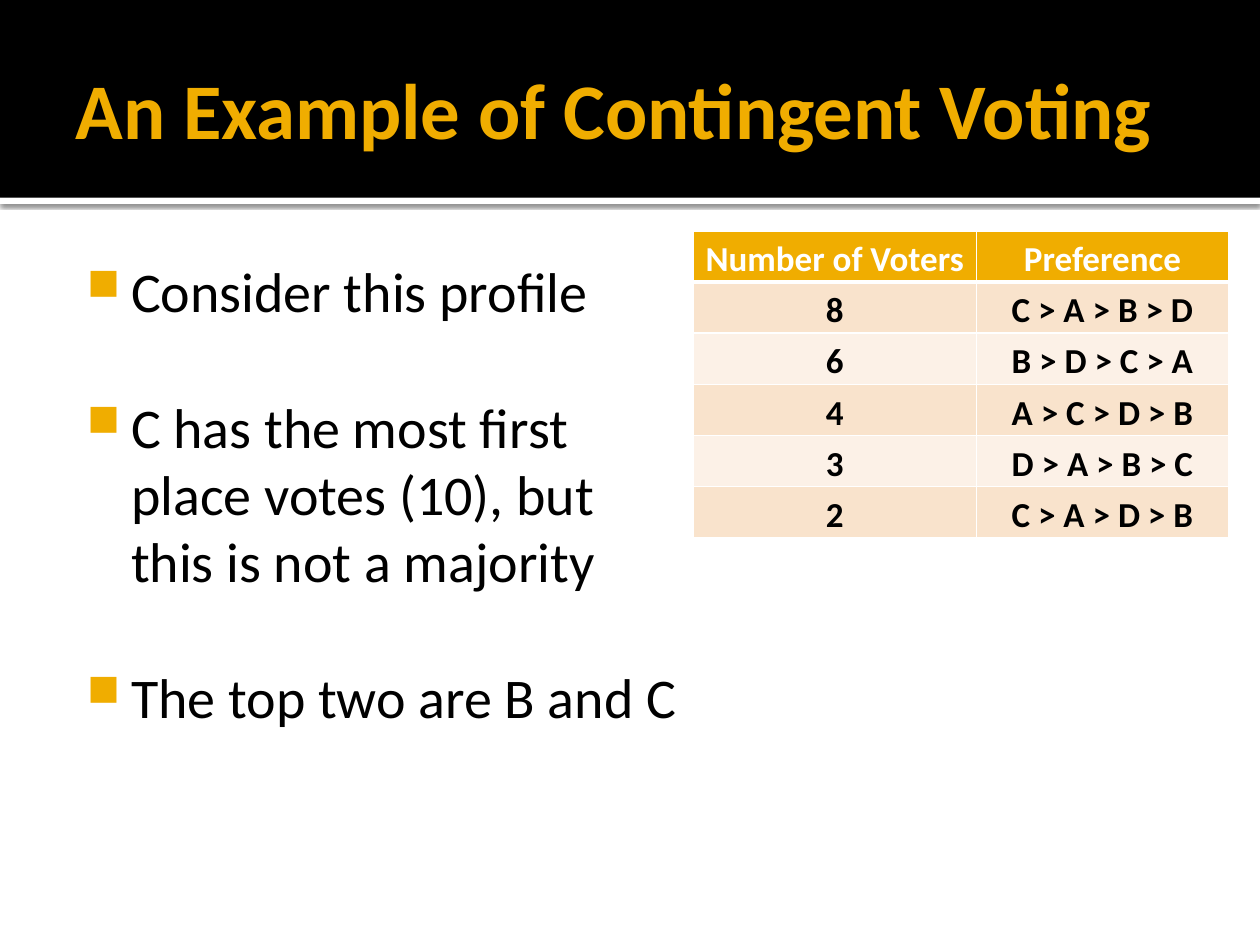
import dataclasses
import typing

import lxml.etree
import pptx
import pptx.dml.color
import pptx.enum.shapes
import pptx.enum.text
import pptx.oxml
import pptx.oxml.ns
import pptx.util

Pt = pptx.util.Pt
qn = pptx.oxml.ns.qn
ANCHOR = pptx.enum.text.MSO_ANCHOR
ALIGN = pptx.enum.text.PP_ALIGN
FONT = "Calibri"
COLORS = {
    "gold": "F0AD00",
    "black": "000000",
    "white": "FFFFFF",
    "odd_row": "F9E3CC",
    "even_row": "FCF1E7",
}


@dataclasses.dataclass(frozen=True)
class Band:
    top: float
    height: float
    color: str
    shadowed: bool


@dataclasses.dataclass(frozen=True)
class Bullet:
    lines: tuple[str, ...]
    space_before: float


class Profile(typing.NamedTuple):
    voters: str
    preference: str


BANDS = (
    Band(113, 3.6, "white", True),
    Band(0, 113, "black", False),
)
BULLETS = (
    Bullet(("Consider this profile",), 0),
    Bullet(("C has the most first", "place votes (10), but", "this is not a majority"), 39),
    Bullet(("The top two are B and C",), 39),
)
PROFILES = (
    Profile("Number of Voters", "Preference"),
    Profile("8", "C > A > B > D"),
    Profile("6", "B > D > C > A"),
    Profile("4", "A > C > D > B"),
    Profile("3", "D > A > B > C"),
    Profile("2", "C > A > D > B"),
)


def rgb(name: str) -> pptx.dml.color.RGBColor:
    return pptx.dml.color.RGBColor.from_string(COLORS[name])


def apply(target: typing.Any, values: dict[str, typing.Any]) -> None:
    for key, value in values.items():
        setattr(target, key, value)


def style_font(font: typing.Any, size: float, color: str, bold: bool) -> None:
    apply(font, {"name": FONT, "size": Pt(size), "bold": bold})
    font.color.rgb = rgb(color)


def margins(left: float, top: float, right: float, bottom: float) -> dict[str, int]:
    return {
        "margin_left": Pt(left),
        "margin_top": Pt(top),
        "margin_right": Pt(right),
        "margin_bottom": Pt(bottom),
    }


def add_fragment(parent: typing.Any, xml: str) -> None:
    namespace = pptx.oxml.ns.nsdecls("a")
    parent.append(pptx.oxml.parse_xml(xml.replace(" ", f" {namespace} ", 1)))


def draw_band(slide: typing.Any, band: Band) -> None:
    strip = slide.shapes.add_shape(
        pptx.enum.shapes.MSO_SHAPE.RECTANGLE, 0, Pt(band.top), Pt(720), Pt(band.height)
    )
    strip.fill.solid()
    strip.fill.fore_color.rgb = rgb(band.color)
    strip.line.fill.background()
    strip.shadow.inherit = False
    if band.shadowed:
        effects = strip.element.spPr.find(qn("a:effectLst"))
        add_fragment(
            effects,
            f'<a:outerShdw blurRad="{Pt(2.5)}" dist="{Pt(0.8)}" dir="5400000" rotWithShape="0">'
            f'<a:srgbClr val="{COLORS["black"]}"><a:alpha val="60000"/></a:srgbClr>'
            "</a:outerShdw>",
        )


def draw_title(slide: typing.Any, text: str) -> None:
    title = slide.shapes.title
    apply(title, {"left": Pt(36), "top": Pt(12), "width": Pt(648), "height": Pt(99)})
    title.element.getparent().append(title.element)
    frame = title.text_frame
    apply(frame, {
        "text": text,
        "word_wrap": True,
        "auto_size": pptx.enum.text.MSO_AUTO_SIZE.NONE,
        "vertical_anchor": ANCHOR.MIDDLE,
        **margins(7.2, 3.6, 3.6, 3.6),
    })
    heading = frame.paragraphs[0]
    heading.alignment = ALIGN.LEFT
    style_font(heading.runs[0].font, 45, "gold", True)


def draw_bullets(slide: typing.Any, bullets: tuple[Bullet, ...]) -> None:
    body = slide.shapes.add_textbox(Pt(36), Pt(139.5), Pt(648), Pt(364.5))
    frame = body.text_frame
    apply(frame, {"word_wrap": True, **margins(4.3, 7.2, 7.2, 3.6)})
    for index, bullet in enumerate(bullets):
        paragraph = frame.paragraphs[0] if index == 0 else frame.add_paragraph()
        paragraph.space_before = Pt(bullet.space_before)
        properties = paragraph._p.get_or_add_pPr()
        properties.set("marL", str(Pt(34.6)))
        properties.set("indent", str(Pt(-25.2)))
        add_fragment(properties, f'<a:buClr ><a:srgbClr val="{COLORS["gold"]}"/></a:buClr>')
        add_fragment(properties, '<a:buSzPct val="80000"/>')
        add_fragment(properties, '<a:buChar char="■"/>')
        for number, line in enumerate(bullet.lines):
            if number:
                paragraph.add_line_break()
            run = paragraph.add_run()
            run.text = line
            style_font(run.font, 32, "black", False)


def draw_borders(cell: typing.Any, widths: dict[str, float]) -> None:
    properties = cell._tc.get_or_add_tcPr()
    for position, (side, width) in enumerate(widths.items()):
        edge = lxml.etree.Element(qn(f"a:{side}"), w=str(Pt(width)))
        fill = lxml.etree.SubElement(edge, qn("a:solidFill"))
        lxml.etree.SubElement(fill, qn("a:srgbClr"), val=COLORS["white"])
        properties.insert(position, edge)


def draw_table(slide: typing.Any, profiles: tuple[Profile, ...]) -> None:
    row_height = 29.2
    table = slide.shapes.add_table(
        len(profiles), 2, Pt(396), Pt(132), Pt(306), Pt(row_height * len(profiles))
    ).table
    for column, width in zip(table.columns, (162, 144)):
        column.width = Pt(width)
    for row, profile in enumerate(profiles):
        table.rows[row].height = Pt(row_height)
        header = row == 0
        background = "gold" if header else ("odd_row" if row % 2 else "even_row")
        for column, text in enumerate(profile):
            cell = table.cell(row, column)
            apply(cell, {
                "text": text,
                "vertical_anchor": ANCHOR.MIDDLE,
                **margins(5, 0, 5, 0),
            })
            cell.fill.solid()
            cell.fill.fore_color.rgb = rgb(background)
            entry = cell.text_frame.paragraphs[0]
            apply(entry, {"alignment": ALIGN.CENTER, "line_spacing": 1.15})
            style_font(entry.runs[0].font, 20, "white" if header else "black", True)
            draw_borders(cell, {
                "lnL": 1, "lnR": 1, "lnT": 3 if row == 1 else 1, "lnB": 3 if header else 1,
            })


def main() -> None:
    presentation = pptx.Presentation()
    apply(presentation, {"slide_width": Pt(720), "slide_height": Pt(540)})
    slide = presentation.slides.add_slide(presentation.slide_layouts.get_by_name("Title Only"))
    for band in BANDS:
        draw_band(slide, band)
    draw_title(slide, "An Example of Contingent Voting")
    draw_bullets(slide, BULLETS)
    draw_table(slide, PROFILES)
    presentation.save("out.pptx")


if __name__ == "__main__":
    main()
